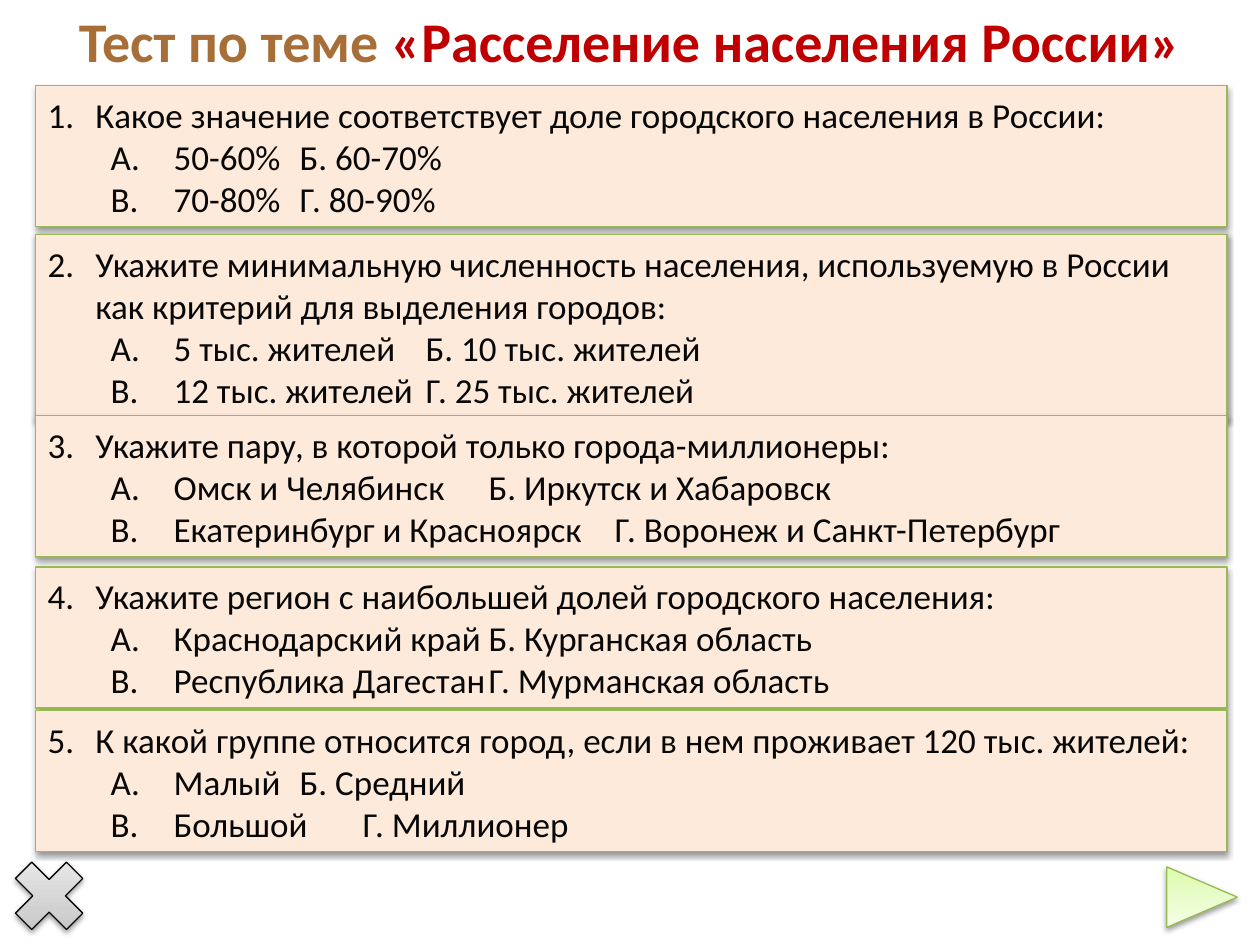
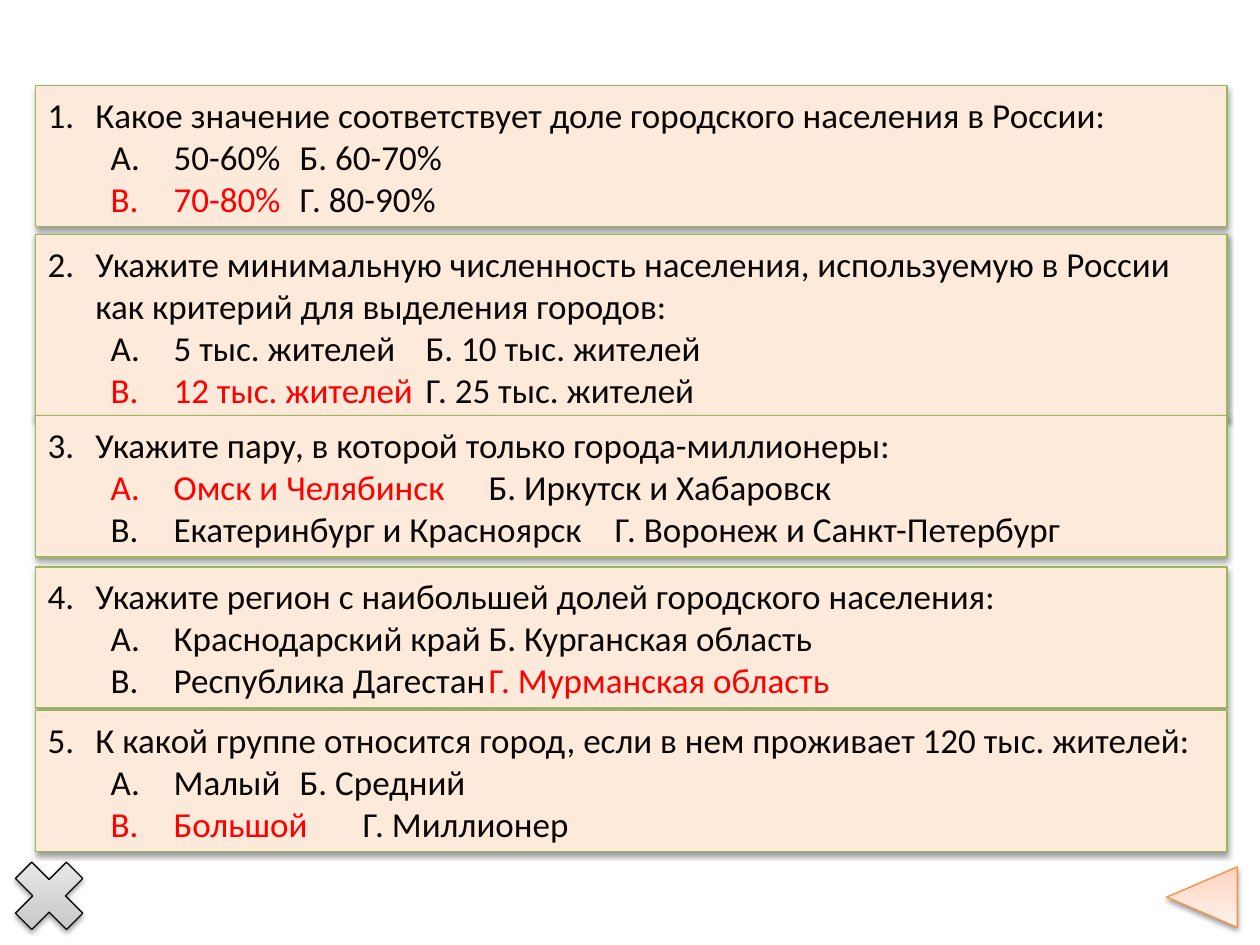
from dataclasses import dataclass
from typing import Optional

from lxml.etree import SubElement
from pptx import Presentation
from pptx.dml.color import RGBColor
from pptx.enum.shapes import MSO_SHAPE
from pptx.enum.text import MSO_ANCHOR, MSO_AUTO_SIZE, PP_ALIGN
from pptx.oxml.ns import qn
from pptx.util import Inches, Pt

COLUMNS, ROWS = 500, 375
SLIDE_WIDTH, SLIDE_HEIGHT = Inches(10), Inches(7.5)
TITLE_ONLY, BLANK = 5, 6
LETTERS = "АБВГ"


@dataclass(frozen=True)
class Theme:
    font: str = "Calibri"
    title_size: int = 32
    text_size: int = 20
    line_width: float = 0.75
    ink: str = "080808"
    correct: str = "FF0000"
    title_lead: str = "A76F37"
    title_topic: str = "C00000"
    panel: str = "FDEADA"
    green: str = "98B955"
    orange: str = "F69240"
    gray_gradient: tuple = ("BDBDBD", "D1D1D1", "EEEEEE")
    green_gradient: tuple = ("DAFDA7", "E4FCC2", "F5FFE7")
    orange_gradient: tuple = ("FFD2BD", "FFDED0", "FFF2ED")
    gradient_stops: tuple = (0, 35, 100)


THEME = Theme()


@dataclass(frozen=True)
class Area:
    """Place on the slide, in grid columns and rows."""
    column: float
    row: float
    width: float
    height: float

    def box(self) -> tuple:
        return (columns(self.column), rows(self.row),
                columns(self.width), rows(self.height))


@dataclass(frozen=True)
class Question:
    row: int
    text: str
    options: tuple
    correct: str
    second_column: float  # grid columns from the text edge
    heading_lines: int = 1


TITLE_AREA = Area(10, 0, 480, 42)
CLOSE_AREA = Area(0, 336, 39, 39)
ARROW_AREA = Area(463, 344, 28, 24)
PANEL_COLUMN, PANEL_WIDTH = 14, 473
PANEL_MARGIN, LINE_ROWS = 5, 17
HEADING_INDENT, OPTION_INDENT, OPTION_TEXT = 19, 25, 42.5

QUESTIONS = (
    Question(34, "Какое значение соответствует доле городского населения в России:",
             ("50-60%", "60-70%", "70-80%", "80-90%"), "В", 110),
    Question(93, "Укажите минимальную численность населения, используемую в России "
                 "как критерий для выделения городов:",
             ("5 тыс. жителей", "10 тыс. жителей", "12 тыс. жителей", "25 тыс. жителей"),
             "В", 178, heading_lines=2),
    Question(165, "Укажите пару, в которой только города-миллионеры:",
             ("Омск и Челябинск", "Иркутск и Хабаровск",
              "Екатеринбург и Красноярск", "Воронеж и Санкт-Петербург"), "А", 216),
    Question(225, "Укажите регион с наибольшей долей городского населения:",
             ("Краснодарский край", "Курганская область",
              "Республика Дагестан", "Мурманская область"), "Г", 175),
    Question(282, "К какой группе относится город, если в нем проживает 120 тыс. жителей:",
             ("Малый", "Средний", "Большой", "Миллионер"), "В", 130),
)


def columns(count: float) -> int:
    return int(SLIDE_WIDTH * count / COLUMNS)


def rows(count: float) -> int:
    return int(SLIDE_HEIGHT * count / ROWS)


# Shape formatting
def add_shadow(shape) -> None:
    shape.shadow.inherit = False
    effects = shape._element.spPr.find(qn("a:effectLst"))
    shadow = SubElement(effects, qn("a:outerShdw"), blurRad="40000", dist="20000",
                        dir="5400000", rotWithShape="0")
    color = SubElement(shadow, qn("a:srgbClr"), val="000000")
    SubElement(color, qn("a:alpha"), val="38000")


def set_gradient(shape, colors: tuple) -> None:
    shape.fill.gradient()
    shape.fill.gradient_angle = 90
    stops = shape._element.spPr.find(qn("a:gradFill")).find(qn("a:gsLst"))
    for stop in list(stops):
        stops.remove(stop)
    for position, color in zip(THEME.gradient_stops, colors):
        stop = SubElement(stops, qn("a:gs"), pos=str(position * 1000))
        SubElement(stop, qn("a:srgbClr"), val=color)


def add_outlined_shape(shapes, kind: MSO_SHAPE, area: Area, line: str):
    shape = shapes.add_shape(kind, *area.box())
    shape.line.color.rgb = RGBColor.from_string(line)
    shape.line.width = Pt(THEME.line_width)
    add_shadow(shape)
    return shape


# Text
def format_paragraph(paragraph, size: int, alignment: PP_ALIGN) -> None:
    paragraph.alignment = alignment
    paragraph.font.name = THEME.font
    paragraph.font.size = Pt(size)


def add_run(paragraph, text: str, color: str) -> None:
    run = paragraph.add_run()
    run.text = text
    run.font.color.rgb = RGBColor.from_string(color)


def set_indent(paragraph, left: float, first: float):
    properties = paragraph._p.get_or_add_pPr()
    properties.set("marL", str(columns(left)))
    properties.set("indent", str(columns(first)))
    return properties


def write_heading(paragraph, number: int, text: str) -> None:
    properties = set_indent(paragraph, HEADING_INDENT, -HEADING_INDENT)
    SubElement(properties, qn("a:buFont"), typeface="+mj-lt")
    SubElement(properties, qn("a:buAutoNum"), type="arabicPeriod", startAt=str(number))
    format_paragraph(paragraph, THEME.text_size, PP_ALIGN.LEFT)
    add_run(paragraph, text, THEME.ink)


def write_options(paragraph, question: Question, first: int, show_correct: bool) -> None:
    paragraph.level = 1
    properties = set_indent(paragraph, 0, OPTION_INDENT)
    tabs = SubElement(properties, qn("a:tabLst"))
    for stop in (OPTION_TEXT, question.second_column):
        SubElement(tabs, qn("a:tab"), pos=str(columns(stop)), algn="l")
    format_paragraph(paragraph, THEME.text_size, PP_ALIGN.LEFT)
    for index, ending in ((first, "\t"), (first + 1, "")):
        letter = LETTERS[index]
        gap = "\t" if index == first else " "
        marked = show_correct and letter == question.correct
        add_run(paragraph, f"{letter}.{gap}{question.options[index]}{ending}",
                THEME.correct if marked else THEME.ink)


# Slide parts
def add_question(shapes, number: int, question: Question, show_correct: bool) -> None:
    height = PANEL_MARGIN + LINE_ROWS * (question.heading_lines + 2)
    area = Area(PANEL_COLUMN, question.row, PANEL_WIDTH, height)
    panel = add_outlined_shape(shapes, MSO_SHAPE.RECTANGLE, area, THEME.green)
    panel.fill.solid()
    panel.fill.fore_color.rgb = RGBColor.from_string(THEME.panel)
    frame = panel.text_frame
    frame.word_wrap = True
    frame.auto_size = MSO_AUTO_SIZE.SHAPE_TO_FIT_TEXT
    write_heading(frame.paragraphs[0], number, question.text)
    for first in (0, 2):
        write_options(frame.add_paragraph(), question, first, show_correct)


def add_navigation(slide, forward: bool) -> None:
    close = add_outlined_shape(slide.shapes, MSO_SHAPE.MATH_MULTIPLY, CLOSE_AREA, THEME.ink)
    set_gradient(close, THEME.gray_gradient)
    arrow = add_outlined_shape(slide.shapes, MSO_SHAPE.PENTAGON, ARROW_AREA,
                               THEME.green if forward else THEME.orange)
    arrow.adjustments[0] = ARROW_AREA.width / ARROW_AREA.height
    set_gradient(arrow, THEME.green_gradient if forward else THEME.orange_gradient)
    arrow.rotation = 180
    if forward:
        arrow._element.spPr.find(qn("a:xfrm")).set("flipH", "1")


def set_title(slide, lead: str, topic: str) -> None:
    title = slide.shapes.title
    title.left, title.top, title.width, title.height = TITLE_AREA.box()
    frame = title.text_frame
    frame.word_wrap = True
    frame.vertical_anchor = MSO_ANCHOR.TOP
    paragraph = frame.paragraphs[0]
    format_paragraph(paragraph, THEME.title_size, PP_ALIGN.CENTER)
    paragraph.font.bold = True
    add_run(paragraph, lead, THEME.title_lead)
    add_run(paragraph, topic, THEME.title_topic)


def add_test_slide(presentation, title: Optional[tuple], show_correct: bool) -> None:
    layout = presentation.slide_layouts[TITLE_ONLY if title else BLANK]
    slide = presentation.slides.add_slide(layout)
    if title:
        set_title(slide, *title)
    add_navigation(slide, forward=not show_correct)
    group = slide.shapes.add_group_shape()
    for number, question in enumerate(QUESTIONS, start=1):
        add_question(group.shapes, number, question, show_correct)


def main() -> None:
    presentation = Presentation()
    presentation.slide_width, presentation.slide_height = SLIDE_WIDTH, SLIDE_HEIGHT
    add_test_slide(presentation, ("Тест по теме ", "«Расселение населения России»"),
                   show_correct=False)
    add_test_slide(presentation, None, show_correct=True)
    presentation.save("out.pptx")


if __name__ == "__main__":
    main()
